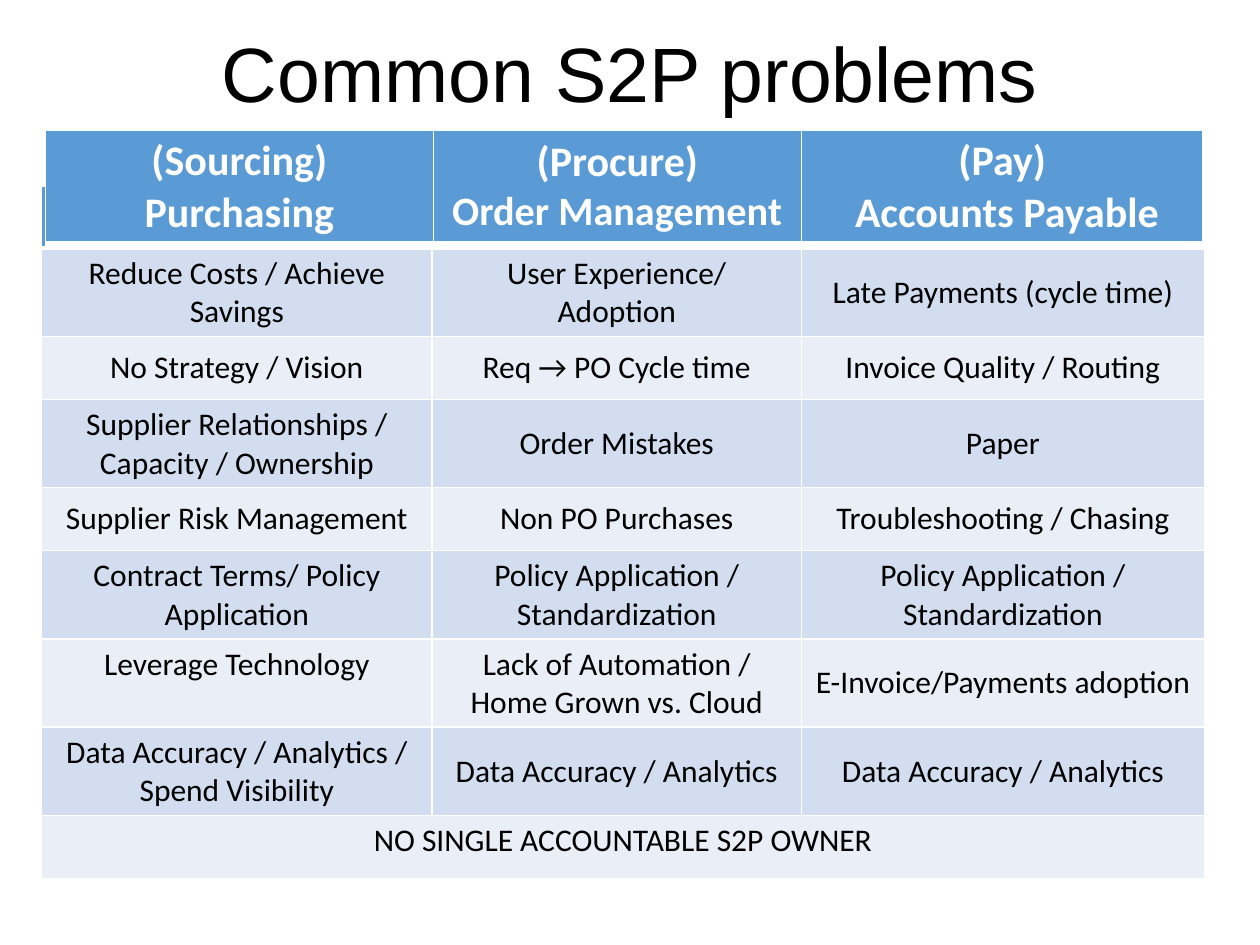
from lxml import etree
from pptx import Presentation
from pptx.dml.color import RGBColor
from pptx.enum.text import MSO_ANCHOR, PP_ALIGN
from pptx.oxml.ns import qn
from pptx.util import Inches, Pt

MIDDLE, TOP = MSO_ANCHOR.MIDDLE, MSO_ANCHOR.TOP
CENTER = PP_ALIGN.CENTER

BLACK = RGBColor(0x00, 0x00, 0x00)
WHITE = RGBColor(0xFF, 0xFF, 0xFF)
HEADER_BLUE = RGBColor(0x5B, 0x9B, 0xD5)
BAND_DARK = RGBColor(0xD2, 0xDE, 0xEF)
BAND_LIGHT = RGBColor(0xEA, 0xEF, 0xF7)

TITLE_FONT = {"name": "Arial", "size": Pt(44)}
HEADER_FONT = {"name": "Calibri", "size": Pt(24), "bold": True}
BODY_FONT = {"name": "Calibri", "size": Pt(18)}

HEADER_LINES = [
    ["(Sourcing) Purchasing"],
    ["(Procure)", "Order Management"],
    ["(Pay)", " Accounts Payable"],
]
ORDER_MANAGEMENT_SIZE = Pt(23)

PROBLEMS = [
    ["Reduce Costs / Achieve Savings", "User Experience/ Adoption",
     "Late Payments (cycle time)"],
    ["No Strategy / Vision", "Req → PO Cycle time", "Invoice Quality / Routing"],
    ["Supplier Relationships / Capacity / Ownership", "Order Mistakes", "Paper"],
    ["Supplier Risk Management", "Non PO Purchases", "Troubleshooting / Chasing"],
    ["Contract Terms/ Policy Application", "Policy Application / Standardization",
     "Policy Application / Standardization"],
    ["Leverage Technology", "Lack of Automation / Home Grown vs. Cloud",
     "E-Invoice/Payments adoption"],
    ["Data Accuracy / Analytics / Spend Visibility", "Data Accuracy / Analytics",
     "Data Accuracy / Analytics"],
]
SHARED_PROBLEM = "NO SINGLE ACCOUNTABLE S2P OWNER"


class SlideBuilder:
    def __init__(self, slide):
        self.slide = slide

    def add_lines(self, frame, lines, font_values, color):
        for index, line in enumerate(lines):
            paragraph = frame.paragraphs[0] if index == 0 else frame.add_paragraph()
            paragraph.alignment = CENTER
            run = paragraph.add_run()
            run.text = line
            for name, value in font_values.items():
                setattr(run.font, name, value)
            run.font.color.rgb = color

    def title(self, text, left, top, width, height):
        box = self.slide.shapes.add_textbox(
            Inches(left), Inches(top), Inches(width), Inches(height))
        frame = box.text_frame
        frame.word_wrap = True
        frame.vertical_anchor = MIDDLE
        self.add_lines(frame, [text], TITLE_FONT, BLACK)
        frame.paragraphs[0].line_spacing = 0.9

    def table(self, left, top, height, column_widths, row_heights):
        table = self.slide.shapes.add_table(
            len(row_heights), len(column_widths), Inches(left), Inches(top),
            Inches(sum(column_widths)), Inches(height)).table
        table.first_row = table.horz_banding = False
        for column, width in zip(table.columns, column_widths):
            column.width = Inches(width)
        for row, row_height in zip(table.rows, row_heights):
            row.height = Inches(row_height)
        return table

    def cell(self, cell, fill, lines=(), font_values=BODY_FONT, color=BLACK,
             anchor=MIDDLE, bottom_width=1):
        self.borders(cell, bottom_width)
        cell.fill.solid()
        cell.fill.fore_color.rgb = fill
        cell.vertical_anchor = anchor
        self.add_lines(cell.text_frame, lines, font_values, color)

    def borders(self, cell, bottom_width):
        """Add white borders; they must come before the cell fill in the XML."""
        properties = cell._tc.get_or_add_tcPr()
        for side, width in {"L": 1, "R": 1, "T": 1, "B": bottom_width}.items():
            line = etree.SubElement(properties, qn(f"a:ln{side}"), w=str(Pt(width)))
            fill = etree.SubElement(line, qn("a:solidFill"))
            etree.SubElement(fill, qn("a:srgbClr"), val=str(WHITE))


def main():
    presentation = Presentation()
    presentation.slide_width = Inches(10)
    presentation.slide_height = Inches(7.5)
    builder = SlideBuilder(presentation.slides.add_slide(presentation.slide_layouts[6]))

    builder.title("Common S2P problems", 0.69, 0, 8.62, 1.23)

    problems = builder.table(0.33, 1.48, 5.48, [3.1, 2.93, 3.2], [0.49] + [0.5] * 8)
    for cell in problems.rows[0].cells:
        builder.cell(cell, HEADER_BLUE, bottom_width=3)
    for row, texts in enumerate(PROBLEMS, start=1):
        band = BAND_DARK if row % 2 else BAND_LIGHT
        for column, text in enumerate(texts):
            anchor = TOP if text == "Leverage Technology" else MIDDLE
            builder.cell(problems.cell(row, column), band, [text], anchor=anchor)
    shared = problems.cell(8, 0)
    shared.merge(problems.cell(8, 2))
    builder.cell(shared, BAND_LIGHT, [SHARED_PROBLEM], anchor=TOP)

    stages = builder.table(0.36, 1.03, 0.9, [3.08, 2.92, 3.19], [0.9])
    for cell, lines in zip(stages.rows[0].cells, HEADER_LINES):
        builder.cell(cell, HEADER_BLUE, lines, HEADER_FONT, WHITE, bottom_width=3)
    order_management = stages.cell(0, 1).text_frame.paragraphs[1]
    order_management.runs[0].font.size = ORDER_MANAGEMENT_SIZE

    presentation.save("out.pptx")


if __name__ == "__main__":
    main()
